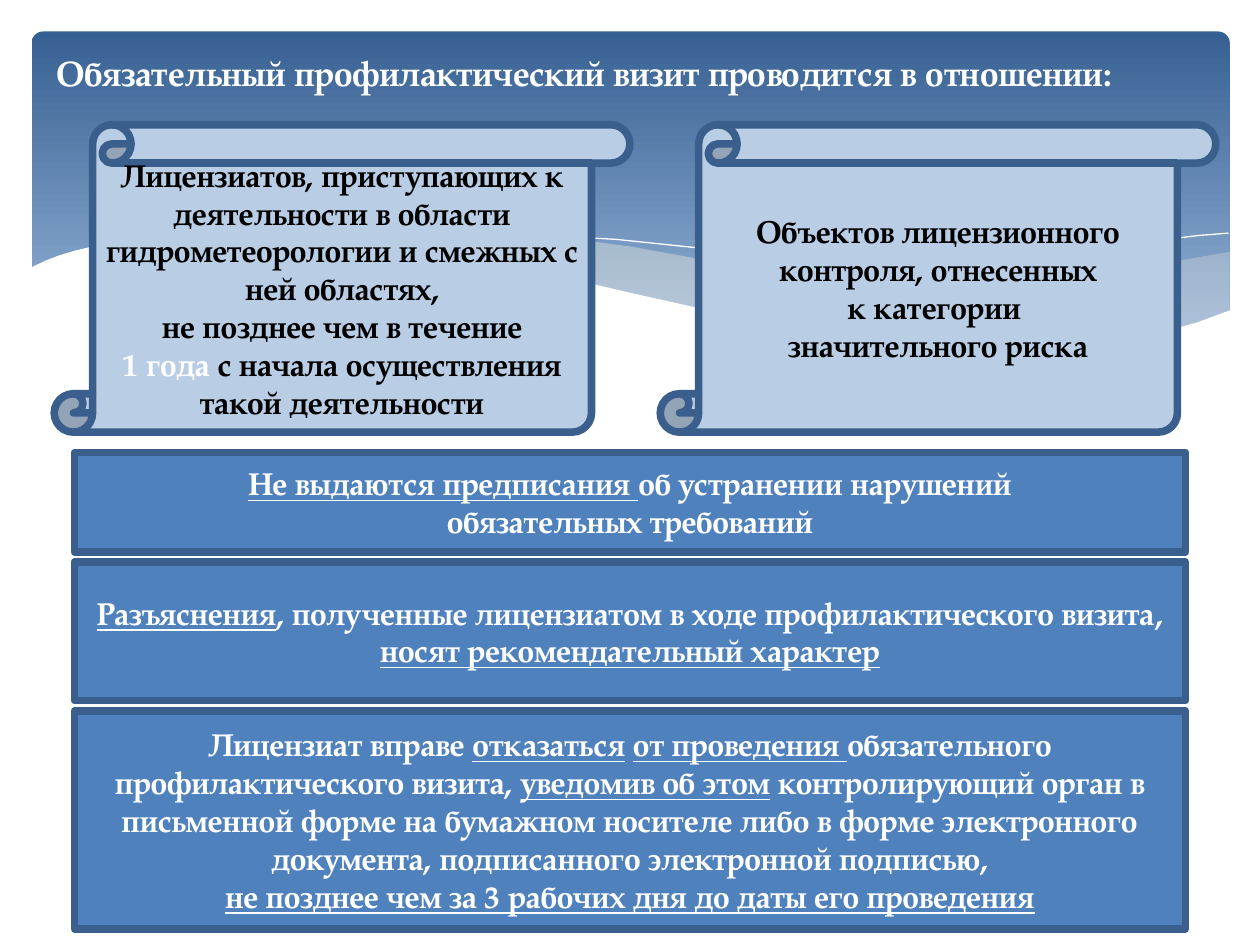
from dataclasses import dataclass
from lxml import etree
from pptx import Presentation
from pptx.dml.color import RGBColor
from pptx.enum.shapes import MSO_SHAPE
from pptx.enum.text import MSO_ANCHOR, MSO_AUTO_SIZE, PP_ALIGN
from pptx.oxml.ns import qn
from pptx.util import Pt

ROUND, RECT, SCROLL = (MSO_SHAPE.ROUNDED_RECTANGLE, MSO_SHAPE.RECTANGLE,
                       MSO_SHAPE.VERTICAL_SCROLL)
TOP, MIDDLE = MSO_ANCHOR.TOP, MSO_ANCHOR.MIDDLE
CENTER, JUSTIFY = PP_ALIGN.CENTER, PP_ALIGN.JUSTIFY


@dataclass
class Theme:
    font: str = "TeX Gyre Pagella"
    head: float = 20
    body: float = 18
    edge: float = 4.33
    white: RGBColor = RGBColor(255, 255, 255)
    black: RGBColor = RGBColor(0, 0, 0)
    deep: RGBColor = RGBColor(0x37, 0x60, 0x92)
    sky: RGBColor = RGBColor(0x95, 0xB3, 0xD7)
    mist: RGBColor = RGBColor(0xEE, 0xEC, 0xE1)
    pale: RGBColor = RGBColor(0xB9, 0xCD, 0xE5)
    blue: RGBColor = RGBColor(0x4F, 0x81, 0xBD)
    rim: RGBColor = RGBColor(0x3A, 0x5F, 0x8C)


theme = Theme()
deck = Presentation()
deck.slide_width, deck.slide_height = Pt(720), Pt(540)
slide = deck.slides.add_slide(deck.slide_layouts[5])
shapes = slide.shapes


def write(frame, paras, size, color, align):
    """Fill a frame; a run is (text, mark), mark "u" underlines, "w" whitens."""
    frame.word_wrap = True
    for i, runs in enumerate(paras):
        para = frame.add_paragraph() if i else frame.paragraphs[0]
        para.alignment = align
        for text, mark in runs:
            run = para.add_run()
            run.text = text
            font = run.font
            font.name, font.size, font.bold = theme.font, Pt(size), True
            font.underline = mark == "u"
            font.color.rgb = theme.white if mark == "w" else color


def panel(kind, box, fill, color, paras):
    """Add a thick-edged shape with centred text."""
    shape = shapes.add_shape(kind, *map(Pt, box))
    shape.shadow.inherit = False
    shape.fill.solid()
    shape.fill.fore_color.rgb = fill
    shape.line.color.rgb = theme.rim
    shape.line.width = Pt(theme.edge)
    shape.text_frame.vertical_anchor = MIDDLE
    write(shape.text_frame, paras, theme.body, color, CENTER)


# Gradient backdrop
back = shapes.add_shape(ROUND, Pt(18), Pt(18), Pt(684.7), Pt(194.4))
back.adjustments[0] = 0.034
back.shadow.inherit = False
back.line.fill.background()
back.fill.gradient()
back.fill.gradient_angle = 270
for stop, color, place in zip(back.fill.gradient_stops,
                              (theme.deep, theme.sky), (0, 0.9)):
    stop.color.rgb = color
    stop.position = place

# Waves: points, fill, opacity in percent; no fill means a hairline
waves = [
    ([(702, 144), (673.2, 149), (652.3, 153.4), (619.9, 160.6),
      (579.6, 170.6), (542.2, 178.6), (508.3, 185), (475.9, 190.8),
      (497.5, 193.7), (527, 197.3), (553.7, 199.4), (578.2, 200.2),
      (601.2, 199.4), (621.4, 198), (640.1, 195.8), (657.4, 192.2),
      (673.2, 188.6), (683.3, 185), (702.7, 177.8), (702.7, 144)],
     theme.mist, 29),
    ([(643, 196.6), (602.6, 190.8), (558, 182.9), (508.3, 172.8),
      (452.9, 159.8), (420.5, 151.9), (389.5, 146.2), (361.4, 141.1),
      (334.8, 137.5), (302.4, 134.6), (273.6, 133.2), (247.7, 133.9),
      (225.4, 135.4), (205.9, 137.5), (246.2, 143.3), (290.9, 151.9),
      (323.3, 159.8), (381.6, 172.8), (432.7, 183.6), (478.8, 191.5),
      (519.8, 197.3), (556.6, 199.4), (588.2, 200.2), (617, 199.4)],
     theme.mist, 40),
    ([(222.5, 140.4), (247.7, 136.8), (278.6, 134.6), (311.8, 134.6),
      (352.1, 136.8), (400.3, 141.8), (437.8, 146.9), (478.8, 153.4),
      (523.4, 162.7), (572.4, 173.5), (625.7, 187.9), (653, 195.8)],
     None, 100),
    ([(441.4, 185), (470.2, 177.1), (500.4, 169.2), (538.6, 160.6),
      (580.3, 151.2), (623.5, 143.3), (655.2, 138.2), (684.7, 134.6),
      (702, 133.2)], None, 100),
    ([(703.4, 177.1), (684, 184.3), (662.4, 190.1), (638.6, 195.1),
      (612, 198), (582.5, 199.4), (547.9, 198), (509.8, 194.4),
      (466.6, 188.6), (416.9, 180), (362.2, 167.8), (321.8, 158.4),
      (281.5, 149), (244.8, 141.8), (210.2, 136.8), (180, 133.9),
      (151.9, 132.5), (127.4, 132.5), (105.1, 133.2), (85.7, 134.6),
      (68.4, 137.5), (54.7, 140.4), (42.5, 143.3), (33.1, 146.2),
      (25.9, 149), (16.6, 153.4), (16.6, 236.9), (703.4, 236.9)],
     theme.white, 100),
]
for points, fill, alpha in waves:
    tenths = [(x * 10, y * 10) for x, y in points]
    pen = shapes.build_freeform(*tenths[0], scale=Pt(0.1))
    pen.add_line_segments(tenths[1:], close=fill is not None)
    wave = pen.convert_to_shape()
    wave.shadow.inherit = False
    if fill is None:
        wave.fill.background()
        wave.line.color.rgb = theme.white
        wave.line.width = Pt(0)
        continue
    wave.line.fill.background()
    wave.fill.solid()
    wave.fill.fore_color.rgb = fill
    tint = wave.element.spPr.find(qn("a:solidFill"))[0]
    etree.SubElement(tint, qn("a:alpha")).set("val", str(alpha * 1000))

# Title, raised above the backdrop
title = shapes.title
title.element.getparent().append(title.element)
title.left, title.top, title.width, title.height = map(
    Pt, (25.2, 25.9, 686.2, 31.7))
title.text_frame.auto_size = MSO_AUTO_SIZE.NONE
title.text_frame.vertical_anchor = TOP
write(title.text_frame,
      [[("Обязательный профилактический визит проводится в отношении:", "")]],
      theme.head, theme.white, JUSTIFY)

# Scrolls: left, width, text
scrolls = [
    (377.3, 317.5, [
        [("Объектов лицензионного контроля, отнесенных", "")],
        [("к категории ", "")],
        [("значительного риска", "")]]),
    (31, 329, [
        [("Лицензиатов, приступающих к деятельности в области "
          "гидрометеорологии и смежных с ней областях,", "")],
        [("не позднее чем в течение", "")],
        [("1 года", "w"),
         (" с начала осуществления такой деятельности", "")]]),
]
for left, width, paras in scrolls:
    panel(SCROLL, (left, 71.3, width, 175.7), theme.pale, theme.black, paras)

# Bars stacked with equal gaps: height, text
bars = [
    (56.9, [
        [("Не выдаются предписания ", "u"), ("об устранении нарушений", "")],
        [("обязательных требований", "")]]),
    (79.2, [
        [("Разъяснения", "u"),
         (", полученные лицензиатом в ходе профилактического визита, ", ""),
         ("носят рекомендательный характер", "u")]]),
    (124.6, [
        [("Лицензиат вправе ", ""), ("отказаться", "u"), (" ", ""),
         ("от проведения ", "u"),
         ("обязательного профилактического визита, ", ""),
         ("уведомив об этом", "u"),
         (" контролирующий орган в письменной форме на бумажном носителе "
          "либо в форме электронного документа, подписанного электронной "
          "подписью,", "")],
        [("не позднее чем за 3 рабочих дня до даты его проведения", "u")]]),
]
top, gap = 258.5, 5.8
for height, paras in bars:
    panel(RECT, (42.5, top, 635, height), theme.blue, theme.white, paras)
    top += height + gap

deck.save("out.pptx")
